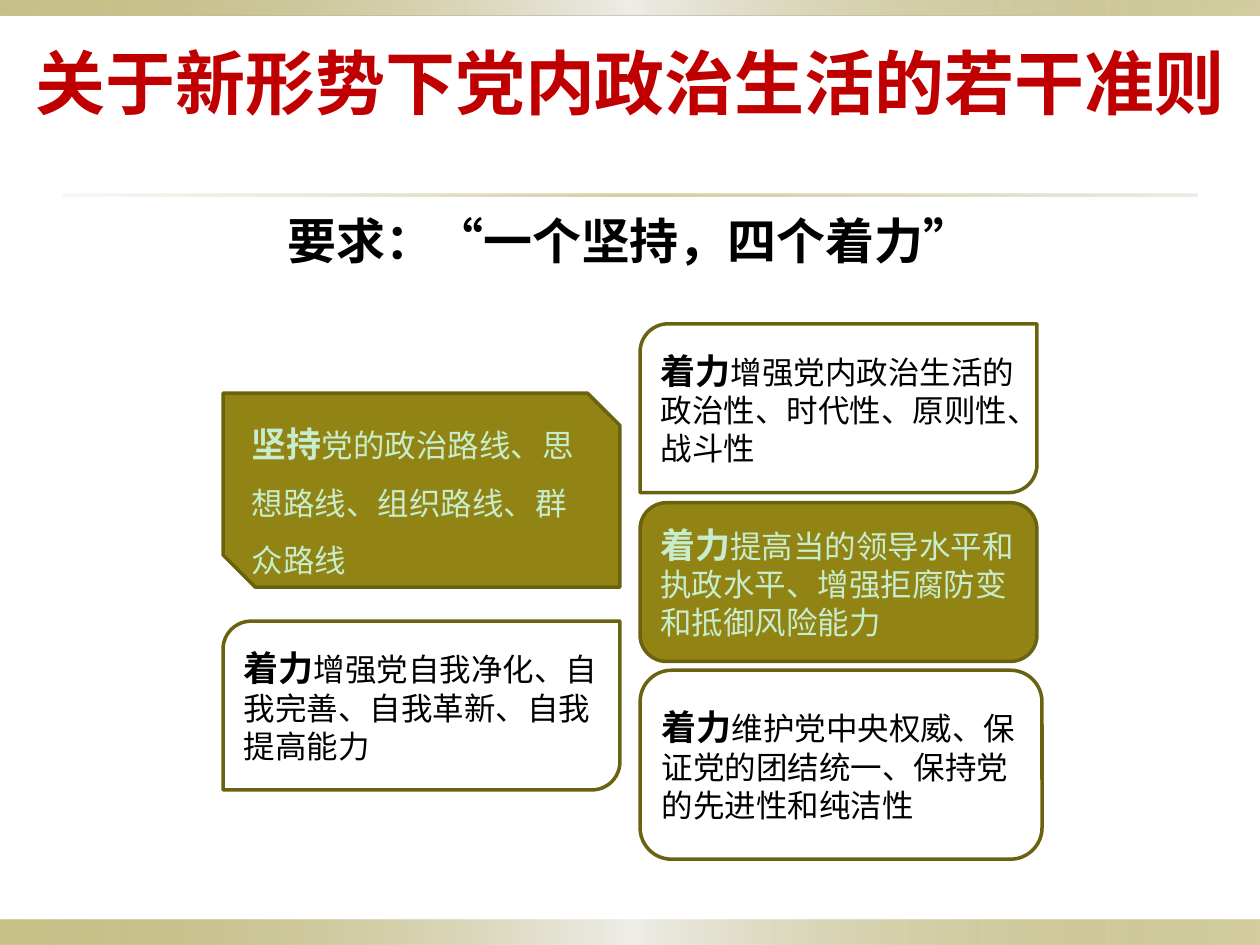
from typing import NamedTuple, Optional

import pptx
import pptx.dml.color
import pptx.enum.shapes
import pptx.enum.text
import pptx.oxml
import pptx.oxml.ns
import pptx.util

RGBColor = pptx.dml.color.RGBColor
Shape = pptx.enum.shapes.MSO_SHAPE
Align = pptx.enum.text.PP_ALIGN
Anchor = pptx.enum.text.MSO_ANCHOR
Pt = pptx.util.Pt

WHITE = RGBColor(0xFF, 0xFF, 0xFF)
BLACK = RGBColor(0x00, 0x00, 0x00)
RED = RGBColor(0xC0, 0x00, 0x00)
OLIVE = RGBColor(0x91, 0x84, 0x15)
DARK_OLIVE = RGBColor(0x6B, 0x62, 0x10)
MINT = RGBColor(0xC7, 0xED, 0xCC)
PALE = RGBColor(0xEE, 0xED, 0xE8)
SAND = RGBColor(0xDC, 0xD9, 0xCC)

WIDTH = pptx.util.Inches(10)
HEIGHT = pptx.util.Inches(7.5)


class Area(NamedTuple):
    """Left, top, width and height in percent of the slide."""
    x: float
    y: float
    w: float
    h: float

    def emu(self) -> list[int]:
        return [round(share * side / 100)
                for share, side in zip(self, (WIDTH, HEIGHT) * 2)]


class Stop(NamedTuple):
    position: int
    color: RGBColor
    opacity: int


class Band(NamedTuple):
    area: Area
    stops: tuple[Stop, ...]


class Heading(NamedTuple):
    area: Area
    text: str
    size: int
    font: str
    color: RGBColor


class Card(NamedTuple):
    area: Area
    outline: Shape
    lead: str
    body: str
    fill: Optional[RGBColor] = None
    color: RGBColor = BLACK
    spacing: float = 1.0


EDGE_STOPS = (Stop(0, OLIVE, 50), Stop(50, PALE, 100), Stop(100, OLIVE, 40))
RULE_STOPS = (Stop(0, SAND, 20), Stop(50, OLIVE, 40), Stop(100, SAND, 50))
BANDS = (
    Band(Area(0, 97.33, 100, 2.67), EDGE_STOPS),
    Band(Area(0, 0, 100, 1.6), EDGE_STOPS),
    Band(Area(5, 20.53, 90, 0.27), RULE_STOPS),
)
HEADINGS = (
    Heading(Area(0, 2.8, 100, 11.6), "关于新形势下党内政治生活的若干准则",
            40, "Arial", RED),
    Heading(Area(0, 21.6, 100, 7.6), "要求：“一个坚持，四个着力”",
            28, "Karla", BLACK),
)

LEFT, RIGHT, CARD_W = 17.7, 50.8, 31.5
CARDS = (
    Card(Area(LEFT, 41.6, CARD_W, 20.53), Shape.SNIP_2_DIAG_RECTANGLE,
         "坚持", "党的政治路线、思想路线、组织路线、群众路线", OLIVE, MINT, 1.5),
    Card(Area(LEFT, 65.73, CARD_W, 17.87), Shape.ROUND_2_DIAG_RECTANGLE,
         "着力", "增强党自我净化、自我完善、自我革新、自我提高能力"),
    Card(Area(RIGHT, 34.27, CARD_W, 17.87), Shape.ROUND_2_DIAG_RECTANGLE,
         "着力", "增强党内政治生活的政治性、时代性、原则性、战斗性"),
    Card(Area(RIGHT, 53.2, CARD_W, 16.8), Shape.ROUNDED_RECTANGLE,
         "着力", "提高当的领导水平和执政水平、增强拒腐防变和抵御风险能力", OLIVE, MINT),
    Card(Area(RIGHT, 70.93, 31.9, 20), Shape.ROUNDED_RECTANGLE,
         "着力", "维护党中央权威、保证党的团结统一、保持党的先进性和纯洁性"),
)


def draw_band(s: pptx.slide.Slide, band: Band) -> None:
    sp = s.shapes.add_shape(Shape.RECTANGLE, *band.area.emu())
    sp.shadow.inherit = False
    sp.line.fill.background()
    sp.fill.gradient()
    sp.fill.gradient_angle = 0
    stops = sp.element.spPr.find(".//" + pptx.oxml.ns.qn("a:gsLst"))
    for old in list(stops):
        stops.remove(old)
    for stop in band.stops:
        stops.append(pptx.oxml.parse_xml(
            f'<a:gs {pptx.oxml.ns.nsdecls("a")} pos="{stop.position * 1000}">'
            f'<a:srgbClr val="{stop.color}">'
            f'<a:alpha val="{stop.opacity * 1000}"/></a:srgbClr></a:gs>'))


def draw_heading(s: pptx.slide.Slide, heading: Heading) -> None:
    tf = s.shapes.add_textbox(*heading.area.emu()).text_frame
    tf.word_wrap = True
    tf.vertical_anchor = Anchor.MIDDLE
    p = tf.paragraphs[0]
    p.text = heading.text
    p.alignment = Align.CENTER
    p.font.name = heading.font
    p.font.size = Pt(heading.size)
    p.font.bold = True
    p.font.color.rgb = heading.color


def draw_card(s: pptx.slide.Slide, card: Card) -> None:
    sp = s.shapes.add_shape(card.outline, *card.area.emu())
    sp.shadow.inherit = False
    sp.line.color.rgb = DARK_OLIVE
    sp.line.width = Pt(2)
    if card.fill is None:
        sp.fill.background()
    else:
        sp.fill.solid()
        sp.fill.fore_color.rgb = card.fill
    tf = sp.text_frame
    tf.word_wrap = True
    tf.vertical_anchor = Anchor.MIDDLE
    p = tf.paragraphs[0]
    p.alignment = Align.LEFT
    p.line_spacing = card.spacing
    for text, size, bold in ((card.lead, 20, True), (card.body, 18, False)):
        r = p.add_run()
        r.text = text
        r.font.name = "Karla"
        r.font.size = Pt(size)
        r.font.bold = bold
        r.font.color.rgb = card.color


def main() -> None:
    prs = pptx.Presentation()
    prs.slide_width, prs.slide_height = WIDTH, HEIGHT
    s = prs.slides.add_slide(prs.slide_layouts[6])
    s.background.fill.solid()
    s.background.fill.fore_color.rgb = WHITE
    for band in BANDS:
        draw_band(s, band)
    for heading in HEADINGS:
        draw_heading(s, heading)
    for card in CARDS:
        draw_card(s, card)
    prs.save("out.pptx")


if __name__ == "__main__":
    main()
